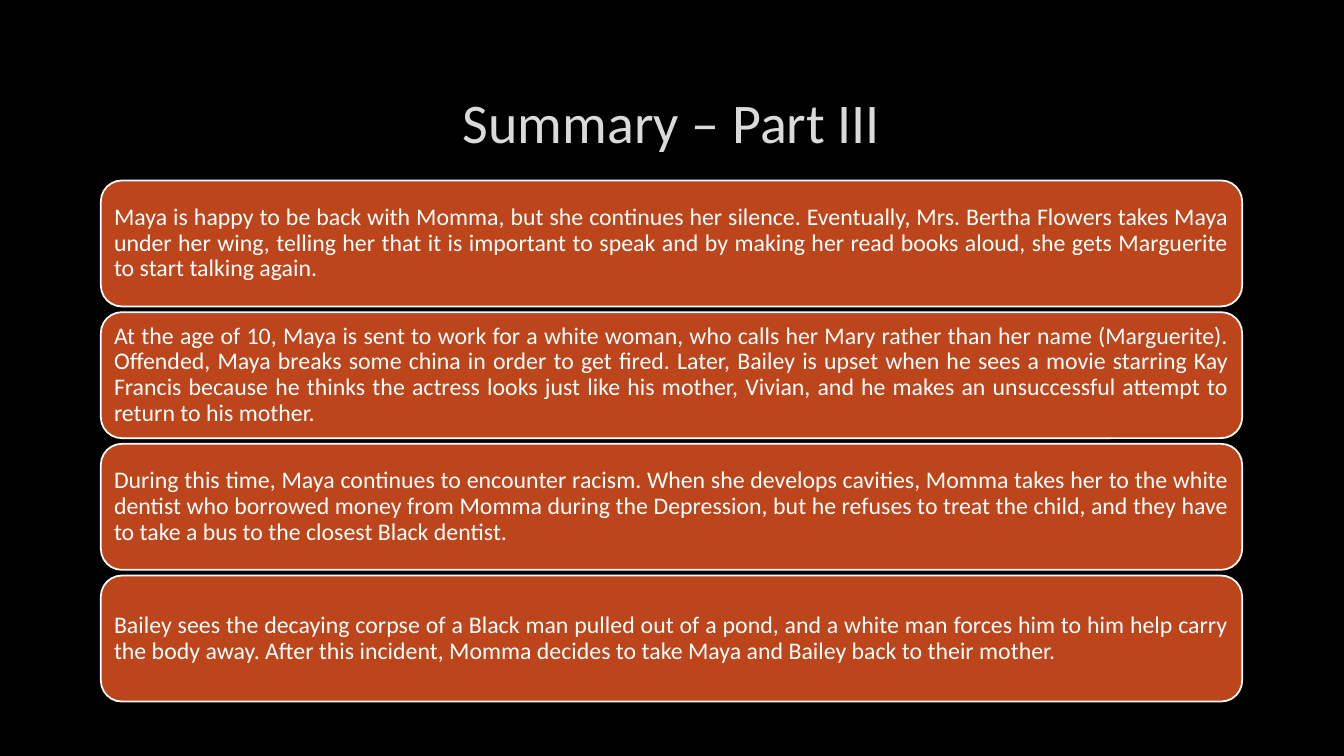
"""Build the summary slide with a title and four stacked text cards."""
from dataclasses import dataclass

from pptx import Presentation
from pptx import util as u
from pptx.dml.color import RGBColor
from pptx.enum import shapes, text


@dataclass(frozen=True)
class Theme:
    """Colours, font and sizes used on the slide."""
    background: RGBColor = RGBColor(0x00, 0x00, 0x00)
    title: RGBColor = RGBColor(0xDA, 0xDA, 0xDA)
    card: RGBColor = RGBColor(0xBC, 0x45, 0x1B)
    light: RGBColor = RGBColor(0xFF, 0xFF, 0xFF)
    font: str = "Calibri"
    title_size: int = 40
    body_size: int = 17
    outline: float = 1.25


THEME = Theme()
LEFT, WIDTH = 1, 11.32
TITLE_BOX = (LEFT, 0.67, WIDTH, 1.06)
CARDS_BOX = (LEFT, 1.79, WIDTH, 5.17)
CARD_HEIGHT = 1.25
CARD_INSET = 0.07

TITLE = "Summary – Part III"
SUMMARIES = [
    "Maya is happy to be back with Momma, but she continues her silence. "
    "Eventually, Mrs. Bertha Flowers takes Maya under her wing, telling her that "
    "it is important to speak and by making her read books aloud, she gets "
    "Marguerite to start talking again.",
    "At the age of 10, Maya is sent to work for a white woman, who calls her Mary "
    "rather than her name (Marguerite). Offended, Maya breaks some china in order "
    "to get fired. Later, Bailey is upset when he sees a movie starring Kay Francis "
    "because he thinks the actress looks just like his mother, Vivian, and he makes "
    "an unsuccessful attempt to return to his mother.",
    "During this time, Maya continues to encounter racism. When she develops "
    "cavities, Momma takes her to the white dentist who borrowed money from Momma "
    "during the Depression, but he refuses to treat the child, and they have to "
    "take a bus to the closest Black dentist.",
    "Bailey sees the decaying corpse of a Black man pulled out of a pond, and a "
    "white man forces him to him help carry the body away. After this incident, "
    "Momma decides to take Maya and Bailey back to their mother.",
]


def write_text(shape, content, *, size, color, align, spacing=1.0, inset=0.1):
    """Fill a shape with one formatted, vertically centred paragraph."""
    frame = shape.text_frame
    frame.word_wrap = True
    frame.auto_size = text.MSO_AUTO_SIZE.NONE
    frame.vertical_anchor = text.MSO_ANCHOR.MIDDLE
    frame.margin_left = frame.margin_right = u.Inches(inset)
    frame.margin_top = frame.margin_bottom = u.Inches(min(inset, 0.07))
    paragraph = frame.paragraphs[0]
    paragraph.alignment = align
    paragraph.line_spacing = spacing
    run = paragraph.add_run()
    run.text = content
    run.font.name = THEME.font
    run.font.size = u.Pt(size)
    run.font.color.rgb = color


def place_title(slide, box):
    """Move the title placeholder into the box and write the title."""
    title = slide.shapes.title
    title.left, title.top, title.width, title.height = map(u.Inches, box)
    write_text(title, TITLE, size=THEME.title_size, color=THEME.title,
               align=text.PP_ALIGN.CENTER)


def add_card(slide, box, content):
    """Draw one rounded card with justified text."""
    card = slide.shapes.add_shape(
        shapes.MSO_SHAPE.ROUNDED_RECTANGLE, *map(u.Inches, box))
    card.shadow.inherit = False
    card.fill.solid()
    card.fill.fore_color.rgb = THEME.card
    card.line.color.rgb = THEME.light
    card.line.width = u.Pt(THEME.outline)
    write_text(card, content, size=THEME.body_size, color=THEME.light,
               align=text.PP_ALIGN.JUSTIFY, spacing=0.9, inset=CARD_INSET)


def add_cards(slide, box, contents):
    """Stack the cards evenly from the top to the bottom of the box."""
    left, top, width, height = box
    pitch = (height - CARD_HEIGHT) / (len(contents) - 1)
    for index, content in enumerate(contents):
        add_card(slide, (left, top + index * pitch, width, CARD_HEIGHT), content)


def main():
    """Create the presentation and save it."""
    presentation = Presentation()
    presentation.slide_width = u.Inches(13.33)
    presentation.slide_height = u.Inches(7.5)
    layout = presentation.slide_layouts.get_by_name("Title Only")
    slide = presentation.slides.add_slide(layout)
    slide.background.fill.solid()
    slide.background.fill.fore_color.rgb = THEME.background
    place_title(slide, TITLE_BOX)
    add_cards(slide, CARDS_BOX, SUMMARIES)
    presentation.save("out.pptx")


if __name__ == "__main__":
    main()
